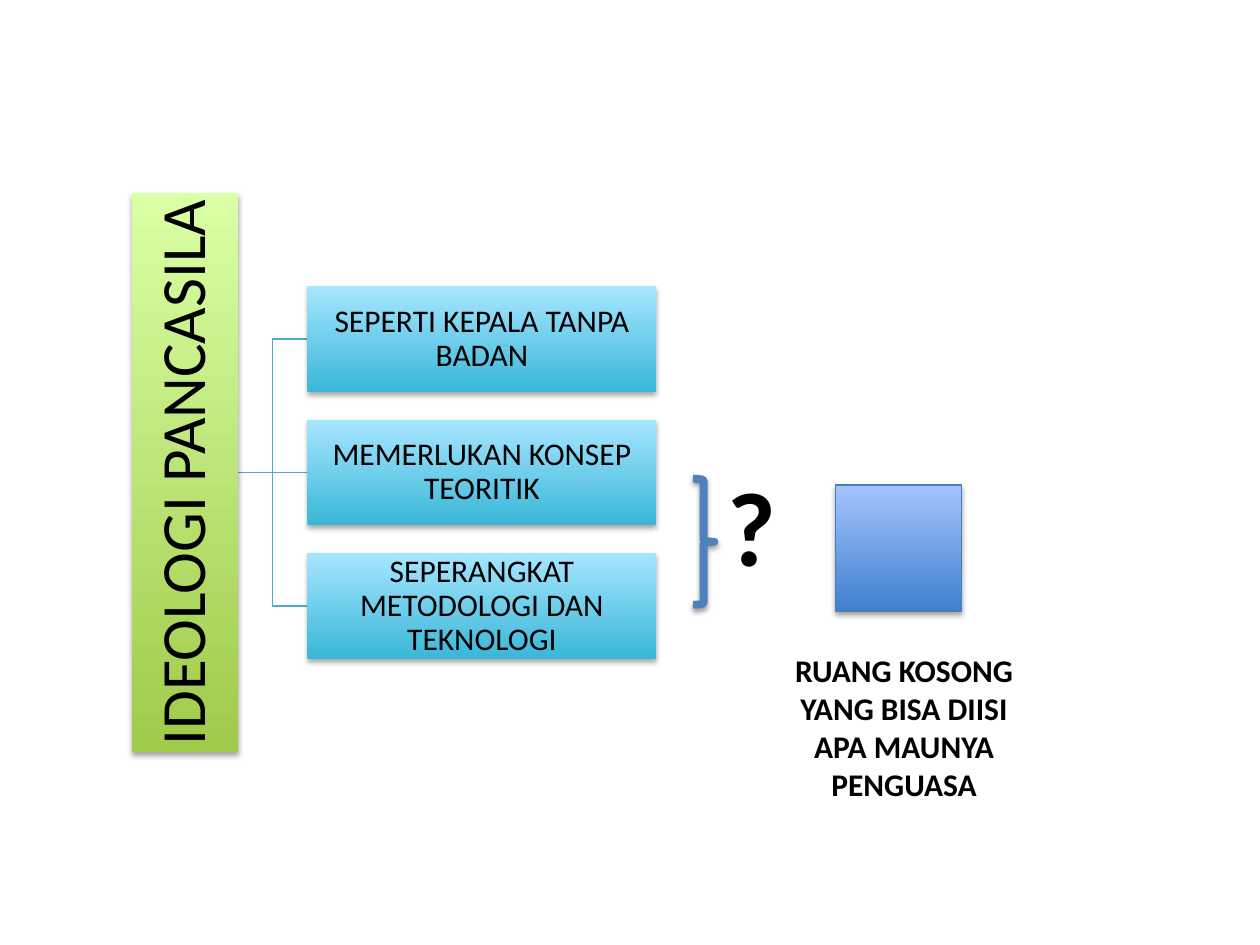
from lxml import etree
from pptx import Presentation
from pptx import util as u
from pptx.dml.color import RGBColor
from pptx.enum import shapes, text
from pptx.oxml import ns

FONT = "Calibri"
COLORS = {
    "text": "000000", "shadow": "000000", "branch": "4BACC6",
    "brace": "4F81BD", "square_line": "4B7EBC",
    "root_dark": "A0CA4A", "root_light": "DAFFA5",
    "item_dark": "39B7D8", "item_light": "A7E6FF",
    "square_dark": "3F80CE", "square_light": "A4C4FF",
}
ITEMS = ["SEPERTI KEPALA TANPA BADAN", "MEMERLUKAN KONSEP TEORITIK",
         "SEPERANGKAT METODOLOGI DAN TEKNOLOGI"]
CAPTION = ["RUANG KOSONG", "YANG BISA DIISI", "APA MAUNYA", "PENGUASA"]


def color(name):
    return RGBColor.from_string(COLORS[name])


def add_shadow(shape, opacity):
    shape.shadow.inherit = False
    effects = shape._element.spPr.find(ns.qn("a:effectLst"))
    outer = etree.SubElement(effects, ns.qn("a:outerShdw"), blurRad=str(u.Pt(3.1)),
                             dist=str(u.Pt(1.8)), dir="5400000", rotWithShape="0")
    tint = etree.SubElement(outer, ns.qn("a:srgbClr"), val=COLORS["shadow"])
    etree.SubElement(tint, ns.qn("a:alpha"), val=str(opacity * 1000))


def add_block(slide, left, top, width, height, palette):
    """Shadowed rectangle, shaded from dark at the bottom to light at the top."""
    block = slide.shapes.add_shape(
        shapes.MSO_SHAPE.RECTANGLE, u.Inches(left), u.Inches(top),
        u.Inches(width), u.Inches(height))
    block.fill.gradient()
    block.fill.gradient_angle = 90
    for stop, shade in zip(block.fill.gradient_stops, ("dark", "light")):
        stop.color.rgb = color(f"{palette}_{shade}")
    block._element.spPr.find(ns.qn("a:gradFill")).set("rotWithShape", "0")
    block.line.fill.background()
    add_shadow(block, 35)
    return block


def write_label(block, label, size, inset):
    frame = block.text_frame
    frame.word_wrap = True
    frame.vertical_anchor = text.MSO_ANCHOR.MIDDLE
    frame.margin_left = frame.margin_right = u.Inches(inset)
    frame.margin_top = frame.margin_bottom = u.Inches(inset)
    style_paragraph(frame.paragraphs[0], label, size)
    frame.paragraphs[0].line_spacing = 0.9


def style_paragraph(paragraph, words, size, bold=False):
    paragraph.text = words
    paragraph.alignment = text.PP_ALIGN.CENTER
    paragraph.font.name = FONT
    paragraph.font.size = u.Pt(size)
    paragraph.font.bold = bold
    paragraph.font.color.rgb = color("text")


def add_bold_text(slide, left, top, width, height, lines, size):
    box = slide.shapes.add_textbox(u.Inches(left), u.Inches(top),
                                   u.Inches(width), u.Inches(height))
    frame = box.text_frame
    frame.word_wrap = False
    for index, line in enumerate(lines):
        paragraph = frame.add_paragraph() if index else frame.paragraphs[0]
        style_paragraph(paragraph, line, size, bold=True)


def add_branch(slide, x1, y1, x2, y2):
    kind = shapes.MSO_CONNECTOR.STRAIGHT if y1 == y2 else shapes.MSO_CONNECTOR.ELBOW
    branch = slide.shapes.add_connector(kind, u.Inches(x1), u.Inches(y1),
                                        u.Inches(x2), u.Inches(y2))
    branch.line.color.rgb = color("branch")
    branch.line.width = u.Pt(0.75)
    etree.SubElement(branch._element.spPr, ns.qn("a:effectLst"))


def add_hierarchy(slide, left, top, width, height):
    """Upright root on the left, branching to a column of items."""
    bar, gap, item_width, pitch = 0.84, 0.55, width - 1.39, 1.06
    middle = top + height / 2
    item_left = left + bar + gap
    centers = [middle + (i - (len(ITEMS) - 1) / 2) * pitch for i in range(len(ITEMS))]
    for center in centers:
        add_branch(slide, left + bar, middle, item_left, center)

    root = add_block(slide, left + (bar - height) / 2, middle - bar / 2,
                     height, bar, "root")
    root.rotation = 270
    write_label(root, "IDEOLOGI PANCASILA", 36, 0.03)
    for center, label in zip(centers, ITEMS):
        item = add_block(slide, item_left, center - bar / 2, item_width, bar, "item")
        write_label(item, label, 18, 0.01)


def add_question(slide, left, top, height):
    brace = slide.shapes.add_shape(shapes.MSO_SHAPE.RIGHT_BRACE, u.Inches(left),
                                   u.Inches(top), u.Inches(0.17), u.Inches(height))
    brace.fill.background()
    brace.line.color.rgb = color("brace")
    brace.line.width = u.Pt(4.5)
    add_shadow(brace, 38)
    add_bold_text(slide, left + 0.17, top - 0.19, 0.6, 1.11, ["?"], 60)


def add_empty_space(slide, left, top, width):
    """Empty square with its caption, which is centred in the width."""
    square = add_block(slide, left + 0.6, top, 1, 1, "square")
    square.line.color.rgb = color("square_line")
    square.line.width = u.Pt(0.75)
    add_bold_text(slide, left, top + 1.27, width, 2.22, CAPTION, 18)


def main():
    deck = Presentation()
    deck.slide_width, deck.slide_height = u.Inches(10), u.Inches(7.5)
    slide = deck.slides.add_slide(deck.slide_layouts[6])
    add_hierarchy(slide, 1.05, 1.53, 4.16, 4.44)
    add_question(slide, 5.5, 3.8, 1)
    add_empty_space(slide, 6.03, 3.85, 2.29)
    deck.save("out.pptx")


if __name__ == "__main__":
    main()
